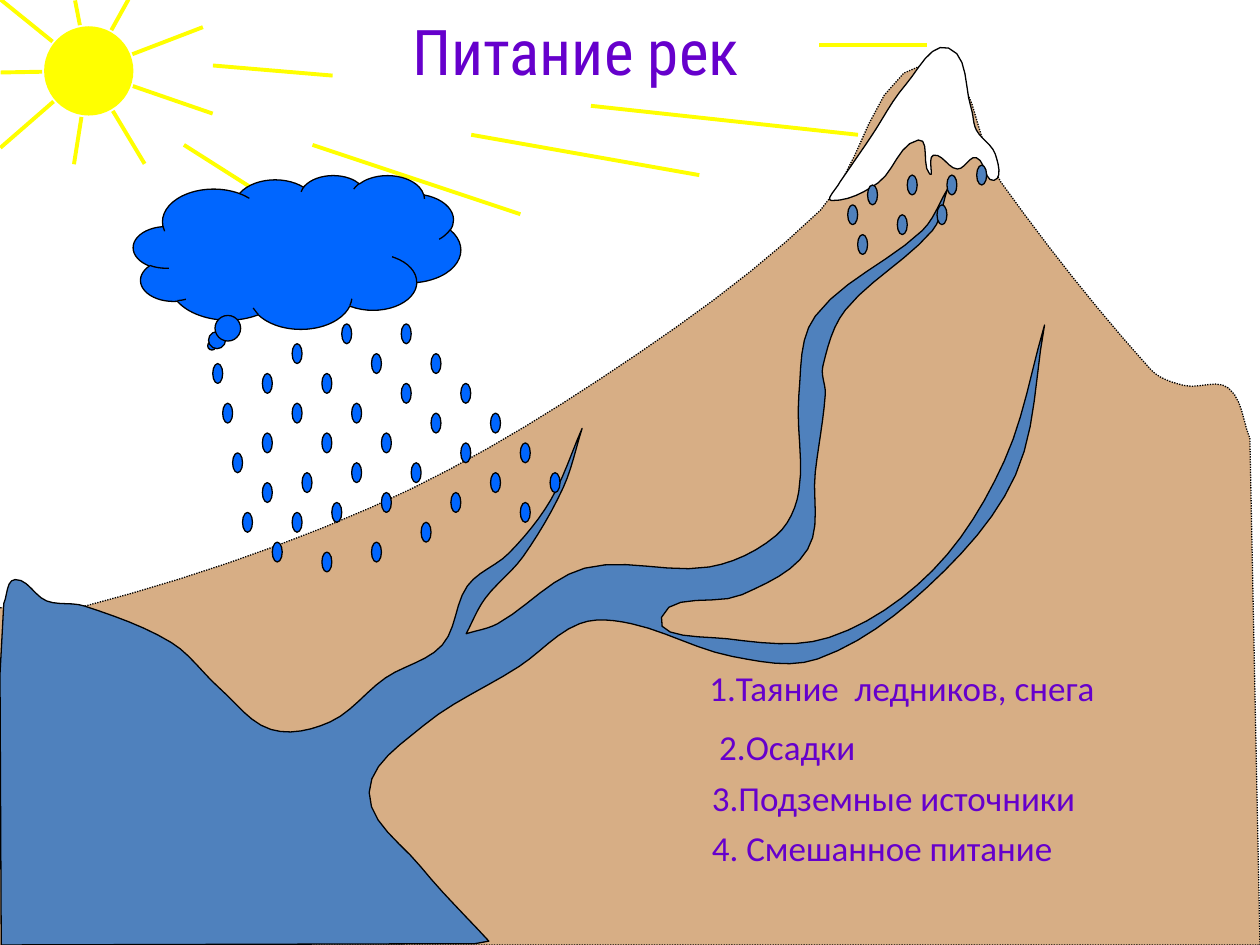
import math

import pptx
import pptx.dml.color
import pptx.enum.dml
import pptx.enum.shapes
import pptx.enum.text
import pptx.oxml
import pptx.util

Cm = pptx.util.Cm
RGB = pptx.dml.color.RGBColor
SHAPE = pptx.enum.shapes.MSO_SHAPE

YELLOW = RGB(0xFF, 0xFF, 0x00)
SAND = RGB(0xD7, 0xAE, 0x85)
WATER = RGB(0x4F, 0x81, 0xBD)
RAIN = RGB(0x00, 0x66, 0xFF)
WHITE = RGB(0xFF, 0xFF, 0xFF)
BLACK = RGB(0x00, 0x00, 0x00)
VIOLET = RGB(0x66, 0x00, 0xCC)

UNIT = Cm(0.0254)
DROP_STEP = Cm(0.2)

SLOPES = [(-8, 482), (64, 482), (294, 403), (476, 301), (651, 167), (738, 49),
          (794, 144), (913, 293), (940, 306), (975, 308), (992, 348)]

SOUTH_BANK = [(829, 258), (806, 377), (736, 466), (649, 523), (581, 521), (501, 495),
              (460, 495), (412, 529), (336, 576), (293, 629), (334, 688), (388, 747)]
LAKE_SHORE = [(3, 479), (12, 460), (37, 477), (67, 481), (136, 510), (174, 546),
              (215, 579), (262, 573), (306, 538), (351, 512), (371, 465), (404, 439),
              (437, 397), (462, 340)]
WEST_STREAM = [(462, 340), (447, 387), (415, 442), (385, 475), (370, 503)]
NORTH_BANK = [(370, 503), (395, 495), (464, 451), (563, 450), (616, 425), (634, 390),
              (634, 314), (647, 251), (732, 183), (752, 150)]
EAST_STREAM = [(752, 150), (740, 183), (671, 246), (653, 291), (655, 313), (647, 375),
               (641, 436), (589, 472), (525, 490), (577, 507), (658, 506), (740, 453),
               (797, 366), (829, 258)]

SNOW = [(11, 106), (4, 121), (41, 107), (73, 73), (82, 100), (85, 85), (104, 96),
        (119, 87), (133, 105), (134, 84), (119, 65), (115, 48), (97, 0), (63, 29),
        (35, 71), (11, 106)]

SUN_RAY_LENGTHS = [104, 86, 75, 93, 70, 90, 57, 65, 97]
SUNBEAMS = [(169, 52, 264, 60), (146, 115, 209, 155), (248, 115, 413, 170),
            (469, 84, 681, 107), (650, 36, 736, 36), (374, 107, 555, 139)]

RAIN_DIAGONALS = {5: [(5, 5), (8, 2), (13, 0), (22, 3)],
                  3: [(2, 13)],
                  2: [(9, 15), (28, 15)],
                  1: [(0, 4), (19, 0), (1, 8), (5, 11), (3, 19), (24, 17), (21, 20),
                      (16, 22), (6, 22), (11, 23)]}
MELT_DROPS = [(6, 1), (9, 4), (2, 2), (10, 1), (5, 5), (0, 4), (1, 7), (13, 0)]

SOURCES = [("1.Таяние  ледников, снега", 0, 0, 8.36, False),
           ("2.Осадки", 0.2, 1.19, 3.66, False),
           ("3.Подземные источники", 0.05, 2.21, 9.37, True),
           ("4. Смешанное питание", 0.05, 3.23, 8.41, True)]


def smooth(anchors, steps=6):
    """Return a smooth outline that passes through the anchors."""
    ends = [anchors[0], *anchors, anchors[-1]]
    tangents = []
    for (x0, y0), (x1, y1) in zip(ends, ends[2:]):
        length = math.hypot(x1 - x0, y1 - y0) or 1
        tangents.append(((x1 - x0) / length, (y1 - y0) / length))
    outline = [anchors[0]]
    for a, b, u, v in zip(anchors, anchors[1:], tangents, tangents[1:]):
        reach = math.dist(a, b)
        for t in (n / steps for n in range(1, steps + 1)):
            rest = 1 - t
            outline.append(tuple(
                rest * rest * (a[k] * (1 + 2 * t) + u[k] * reach * t)
                + t * t * (b[k] * (1 + 2 * rest) - v[k] * reach * rest) for k in (0, 1)))
    return outline


def paint(shape, fill, outline=BLACK):
    """Set the fill and the thin outline of a shape."""
    shape.shadow.inherit = False
    shape.fill.solid()
    shape.fill.fore_color.rgb = fill
    if outline is None:
        shape.line.fill.background()
    else:
        shape.line.color.rgb = outline
        shape.line.width = pptx.util.Pt(0.75)
    return shape


def add_outline(slide, box, points, fill):
    """Draw a closed outline whose points count in units from the box corner."""
    left, top = box[:2]
    spots = [(round(left + x * UNIT), round(top + y * UNIT)) for x, y in points]
    builder = slide.shapes.build_freeform(*spots[0], scale=1.0)
    builder.add_line_segments(spots[1:], close=True)
    return paint(builder.convert_to_shape(), fill)


def add_rays(slide, box, rays):
    """Draw yellow rays relative to the box corner."""
    left, top = box[:2]
    for x0, y0, x1, y1 in rays:
        ray = slide.shapes.add_connector(
            pptx.enum.shapes.MSO_CONNECTOR.STRAIGHT,
            round(left + x0 * UNIT), round(top + y0 * UNIT),
            round(left + x1 * UNIT), round(top + y1 * UNIT))
        ray.line.color.rgb = YELLOW
        ray.line.width = pptx.util.Pt(2.25)
        effects = pptx.oxml.parse_xml(
            '<a:effectLst xmlns:a="http://schemas.openxmlformats.org/drawingml/2006/main"/>')
        ray._element.spPr.append(effects)


def add_drops(slide, box, cells, fill):
    """Draw a group of drops on the grid that starts at the box corner."""
    left, top = box[:2]
    drops = slide.shapes.add_group_shape().shapes
    for column, row in cells:
        paint(drops.add_shape(SHAPE.OVAL, left + column * DROP_STEP, top + row * DROP_STEP,
                              DROP_STEP, 2 * DROP_STEP), fill)


def add_text(slide, box, text, size=20, font="Calibri", align=None, wrap=True, grow=True):
    """Add a line of violet text."""
    frame = slide.shapes.add_textbox(*box).text_frame
    frame.word_wrap = wrap
    sizing = pptx.enum.text.MSO_AUTO_SIZE
    frame.auto_size = sizing.SHAPE_TO_FIT_TEXT if grow else sizing.NONE
    paragraph = frame.paragraphs[0]
    paragraph.alignment = align
    run = paragraph.add_run()
    run.text = text
    run.font.size = pptx.util.Pt(size)
    run.font.name = font
    run.font.color.rgb = VIOLET


def draw_mountain(slide, box):
    """Draw the sandy mountain down to the bottom of the box."""
    mountain = add_outline(slide, box, smooth(SLOPES) + [(1000, 750), (-8, 750)], SAND)
    mountain.line.dash_style = pptx.enum.dml.MSO_LINE.ROUND_DOT


def draw_sun(slide, box):
    """Draw the sun disc in its box and the rays around it."""
    left, top, width, height = box
    paint(slide.shapes.add_shape(SHAPE.OVAL, *box), YELLOW, None)
    rays = []
    for i, length in enumerate(SUN_RAY_LENGTHS):
        angle = math.radians(19 + 40 * i)
        x, y = math.cos(angle), math.sin(angle)
        rays.append((37 * x, 37 * y, length * x, length * y))
    add_rays(slide, (left + width / 2, top + height / 2), rays)


def draw_river(slide, box):
    """Draw the lake with the river and its tributaries."""
    banks = (LAKE_SHORE, WEST_STREAM, NORTH_BANK, EAST_STREAM, SOUTH_BANK)
    shore = [point for bank in banks for point in smooth(bank)]
    add_outline(slide, box, shore + [(377, 749), (1, 750), (0, 535)], WATER)


def draw_cloud(slide, box):
    """Draw the rain cloud and the rain below it."""
    left, top = box[:2]
    cloud = paint(slide.shapes.add_shape(SHAPE.CLOUD_CALLOUT, *box), RAIN)
    cloud.adjustments[0], cloud.adjustments[1] = -0.26, 0.61
    cells = [(column + 3 * i, row + 3 * i) for count, starts in RAIN_DIAGONALS.items()
             for column, row in starts for i in range(count)]
    add_drops(slide, (left + Cm(1.6), top + Cm(3)), cells, RAIN)


def draw_sources(slide, box):
    """List the sources that feed a river."""
    left, top = box[:2]
    for text, x, y, width, wrap in SOURCES:
        add_text(slide, (left + Cm(x), top + Cm(y), Cm(width), Cm(1.09)), text, wrap=wrap)


def main():
    """Build the slide."""
    deck = pptx.Presentation()
    deck.slide_width, deck.slide_height = Cm(25.4), Cm(19.05)
    slide = deck.slides.add_slide(deck.slide_layouts[6])
    slide.background.fill.solid()
    slide.background.fill.fore_color.rgb = WHITE
    scene = (0, 0, deck.slide_width, deck.slide_height)
    draw_mountain(slide, scene)
    draw_sun(slide, (Cm(0.89), Cm(0.53), Cm(1.8), Cm(1.8)))
    draw_river(slide, scene)
    add_outline(slide, (Cm(16.66), Cm(0.97)), smooth(SNOW), WHITE)
    add_text(slide, (Cm(7.11), Cm(0.13), Cm(8.99), Cm(1.8)), "Питание рек", size=36,
             font="Roboto Condensed", align=pptx.enum.text.PP_ALIGN.CENTER,
             wrap=False, grow=False)
    add_rays(slide, scene, SUNBEAMS)
    draw_cloud(slide, (Cm(2.69), Cm(3.53), Cm(6.6), Cm(3.1)))
    draw_sources(slide, (Cm(14.05), Cm(13.31)))
    add_drops(slide, (Cm(17.09), Cm(3.33)), MELT_DROPS, WATER)
    deck.save("out.pptx")


if __name__ == "__main__":
    main()
